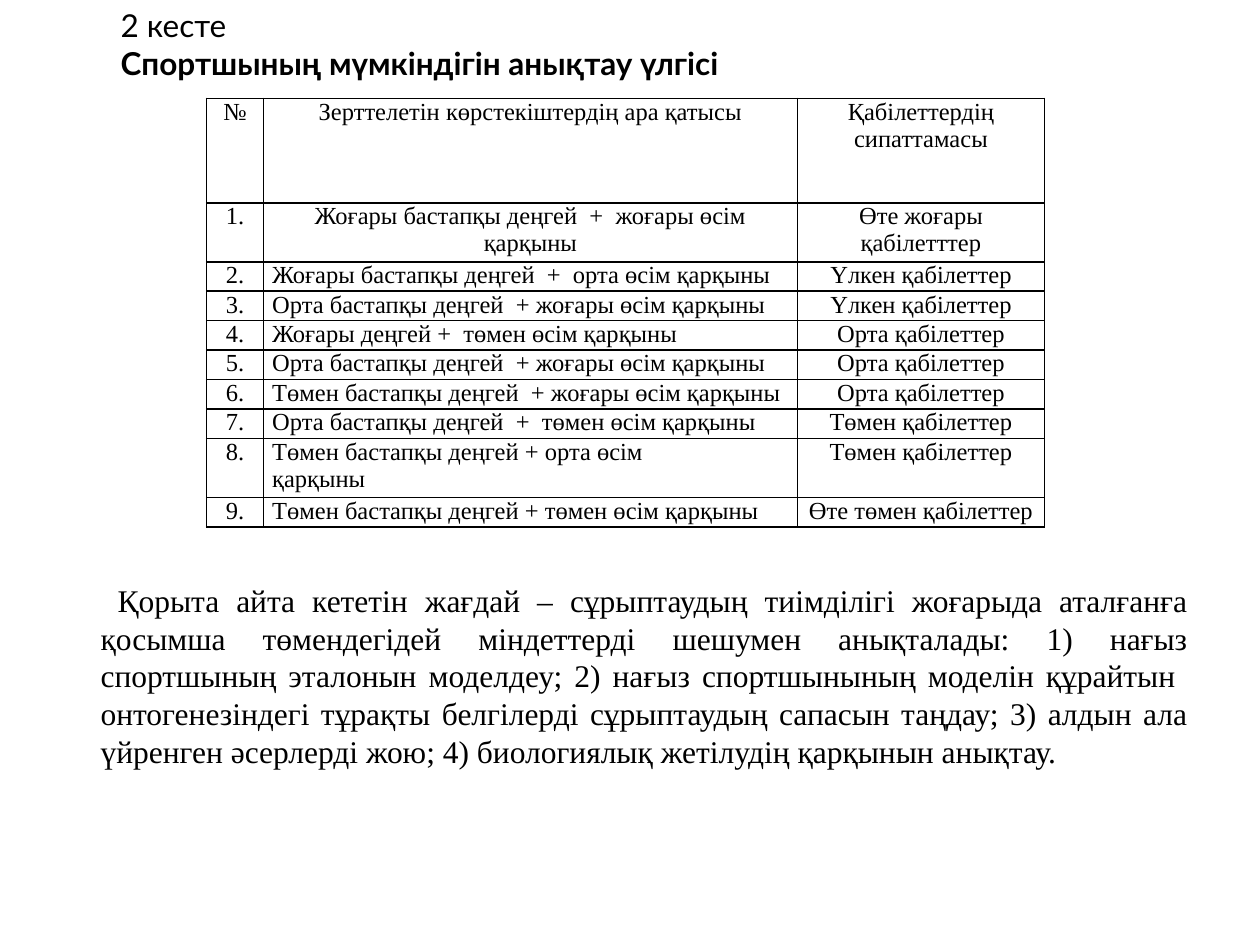
import pptx
import pptx.dml.color
import pptx.enum.text
import pptx.oxml
import pptx.oxml.ns
import pptx.util

ALIGN = pptx.enum.text.PP_ALIGN
THEME = {
    "ink": pptx.dml.color.RGBColor(0, 0, 0),
    "title_font": "Lato",
    "body_font": "Times New Roman",
    "text_size": pptx.util.Pt(18),
    "table_size": pptx.util.Pt(14),
    "border": pptx.util.Pt(1),
}

presentation = pptx.Presentation()
presentation.slide_width = pptx.util.Inches(10)
presentation.slide_height = pptx.util.Inches(7.5)
slide = presentation.slides.add_slide(presentation.slide_layouts[6])

# Grid of 100 columns by 100 rows
COLUMN = presentation.slide_width / 100
ROW = presentation.slide_height / 100


def style_paragraph(paragraph, font, size, alignment):
    paragraph.font.name = font
    paragraph.font.size = size
    paragraph.font.color.rgb = THEME["ink"]
    paragraph.alignment = alignment


def add_text(left, top, width, height, text, font, alignment):
    """Add a wrapped text box placed on the grid and return its paragraphs."""
    box = slide.shapes.add_textbox(
        int(left * COLUMN), int(top * ROW), int(width * COLUMN), int(height * ROW))
    frame = box.text_frame
    frame.word_wrap = True
    frame.text = text
    for paragraph in frame.paragraphs:
        style_paragraph(paragraph, font, THEME["text_size"], alignment)
    return frame.paragraphs


title = add_text(8.6, 0, 86.7, 13.47, "2 кесте\nСпортшының мүмкіндігін анықтау үлгісі",
                 THEME["title_font"], ALIGN.LEFT)
title[1].font.bold = True

conclusion = add_text(
    7, 60.8, 88.3, 21.6,
    "Қорыта айта кететін жағдай – сұрыптаудың тиімділігі жоғарыда аталғанға "
    "қосымша төмендегідей міндеттерді шешумен анықталады: 1) нағыз спортшының "
    "эталонын моделдеу; 2) нағыз спортшынының моделін құрайтын  онтогенезіндегі "
    "тұрақты белгілерді сұрыптаудың сапасын таңдау; 3) алдын ала үйренген "
    "әсерлерді жою; 4) биологиялық жетілудің қарқынын анықтау.",
    THEME["body_font"], ALIGN.JUSTIFY)
conclusion[0]._p.get_or_add_pPr().set("indent", str(int(1.35 * COLUMN)))

header = ("№", "Зерттелетін көрстекіштердің ара қатысы", "Қабілеттердің сипаттамасы")
levels = [
    ("Жоғары бастапқы деңгей  +  жоғары өсім қарқыны", "Өте жоғары қабілетттер"),
    ("Жоғары бастапқы деңгей  +  орта өсім қарқыны", "Үлкен қабілеттер"),
    ("Орта бастапқы деңгей  + жоғары өсім қарқыны", "Үлкен қабілеттер"),
    ("Жоғары деңгей +  төмен өсім қарқыны", "Орта қабілеттер"),
    ("Орта бастапқы деңгей  + жоғары өсім қарқыны", "Орта қабілеттер"),
    ("Төмен бастапқы деңгей  + жоғары өсім қарқыны", "Орта қабілеттер"),
    ("Орта бастапқы деңгей  +  төмен өсім қарқыны", "Төмен қабілеттер"),
    ("Төмен бастапқы деңгей + орта өсім\nқарқыны", "Төмен қабілеттер"),
    ("Төмен бастапқы деңгей + төмен өсім қарқыны", "Өте төмен қабілеттер"),
]
records = [header] + [(f"{number}.", *level) for number, level in enumerate(levels, 1)]
column_widths = (4.5, 42.4, 19.6)
line_height = 3.12
row_heights = [11.07] + [line_height] * len(levels)
for two_line_row in (1, 8):
    row_heights[two_line_row] = 2 * line_height

table = slide.shapes.add_table(
    len(records), len(header), int(16.4 * COLUMN), int(10.4 * ROW),
    int(sum(column_widths) * COLUMN), int(sum(row_heights) * ROW)).table
table.first_row = False
table.horz_banding = False
for table_column, width in zip(table.columns, column_widths):
    table_column.width = int(width * COLUMN)

for row_index, (record, height) in enumerate(zip(records, row_heights)):
    table.rows[row_index].height = int(height * ROW)
    for column_index, text in enumerate(record):
        cell = table.cell(row_index, column_index)
        cell.text = text
        cell.margin_left = cell.margin_right = int(0.7 * COLUMN)
        cell.margin_top = cell.margin_bottom = 0
        justified = column_index == 1 and row_index > 1
        for paragraph in cell.text_frame.paragraphs:
            style_paragraph(paragraph, THEME["body_font"], THEME["table_size"],
                            ALIGN.JUSTIFY if justified else ALIGN.CENTER)
        properties = cell._tc.get_or_add_tcPr()
        for side in ("lnL", "lnR", "lnT", "lnB"):
            properties.append(pptx.oxml.parse_xml(
                f'<a:{side} {pptx.oxml.ns.nsdecls("a")} w="{THEME["border"]}">'
                f'<a:solidFill><a:srgbClr val="{THEME["ink"]}"/></a:solidFill></a:{side}>'))
        cell.fill.background()

presentation.save("out.pptx")
